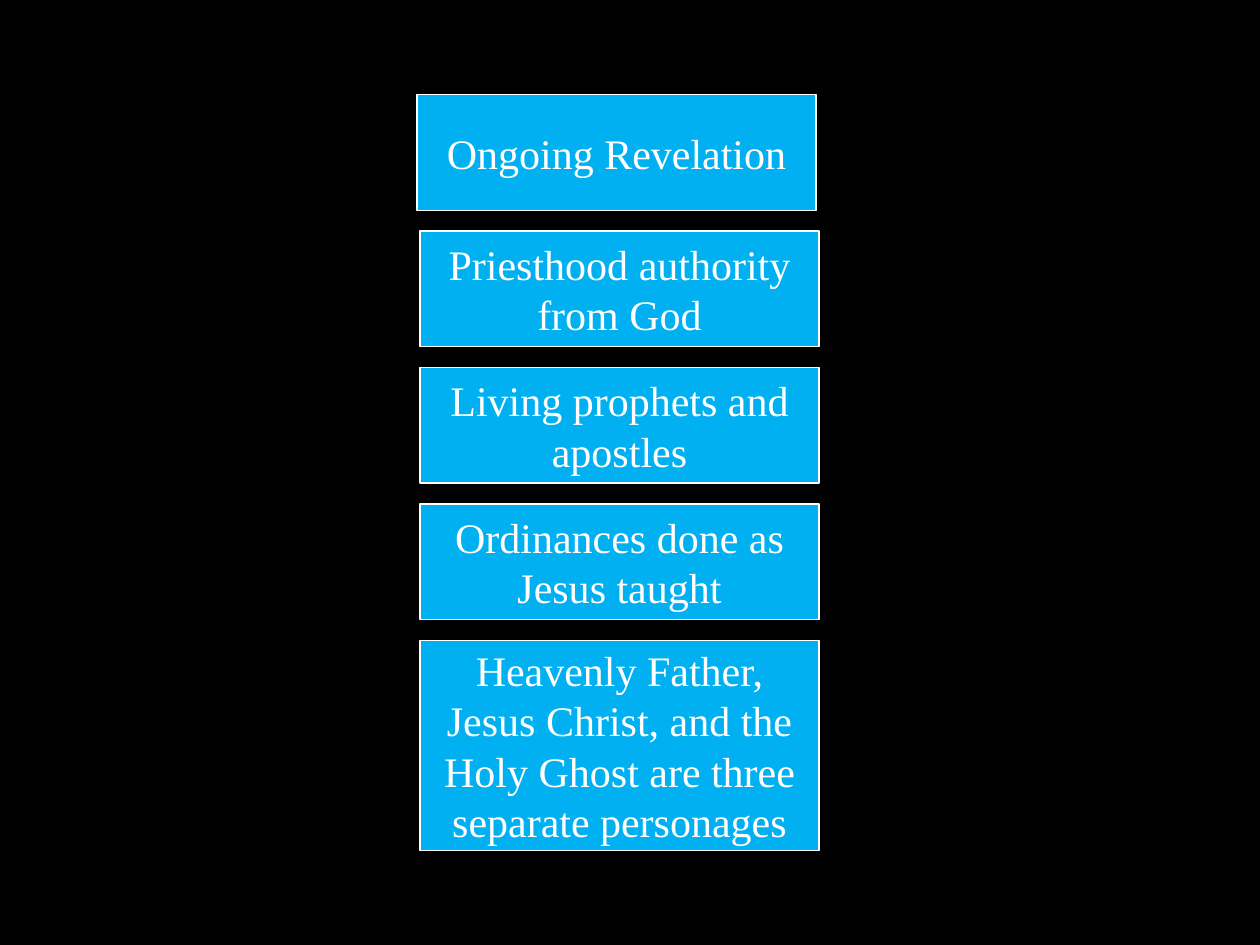
from dataclasses import dataclass

from pptx import Presentation
from pptx.dml.color import RGBColor as RGB
from pptx.enum.shapes import MSO_SHAPE as Shape
from pptx.enum.text import MSO_ANCHOR as Anchor, PP_ALIGN as Align
from pptx.util import Cm, Pt


@dataclass(frozen=True)
class Theme:
    back: RGB = RGB(0, 0, 0)
    fill: RGB = RGB(0x00, 0xB0, 0xF0)
    ink: RGB = RGB(255, 255, 255)
    font: str = "Times New Roman"
    size: Pt = Pt(24)
    line: Pt = Pt(0.75)


THEME = Theme()

# Stack layout in centimetres
LEFT, TOP, WIDTH = 8.47, 1.91, 8.04
STEP, SHORT, TALL = 2.75, 2.33, 4.23
SHIFT = 0.06  # the first box sits slightly to the left

BELIEFS = [
    "Ongoing Revelation",
    "Priesthood authority from God",
    "Living prophets and apostles",
    "Ordinances done as Jesus taught",
    "Heavenly Father, Jesus Christ, and the Holy Ghost are three separate personages",
]


def paint(slide):
    fill = slide.background.fill
    fill.solid()
    fill.fore_color.rgb = THEME.back


def add_box(slide, text, left, top, height):
    box = slide.shapes.add_shape(
        Shape.RECTANGLE, Cm(left), Cm(top), Cm(WIDTH), Cm(height))
    box.shadow.inherit = False
    box.fill.solid()
    box.fill.fore_color.rgb = THEME.fill
    box.line.color.rgb = THEME.ink
    box.line.width = THEME.line

    # Centred label
    frame = box.text_frame
    frame.text = text
    frame.word_wrap = True
    frame.vertical_anchor = Anchor.MIDDLE
    para = frame.paragraphs[0]
    para.alignment = Align.CENTER
    font = para.runs[0].font
    font.name, font.size = THEME.font, THEME.size
    font.color.rgb = THEME.ink


def main():
    deck = Presentation()
    deck.slide_width, deck.slide_height = Cm(25.4), Cm(19.05)
    slide = deck.slides.add_slide(deck.slide_layouts[6])
    paint(slide)

    # Equal steps down; the last box is taller
    last = len(BELIEFS) - 1
    for i, text in enumerate(BELIEFS):
        left = LEFT - SHIFT if i == 0 else LEFT
        height = TALL if i == last else SHORT
        add_box(slide, text, left, TOP + i * STEP, height)

    deck.save("out.pptx")


if __name__ == "__main__":
    main()
